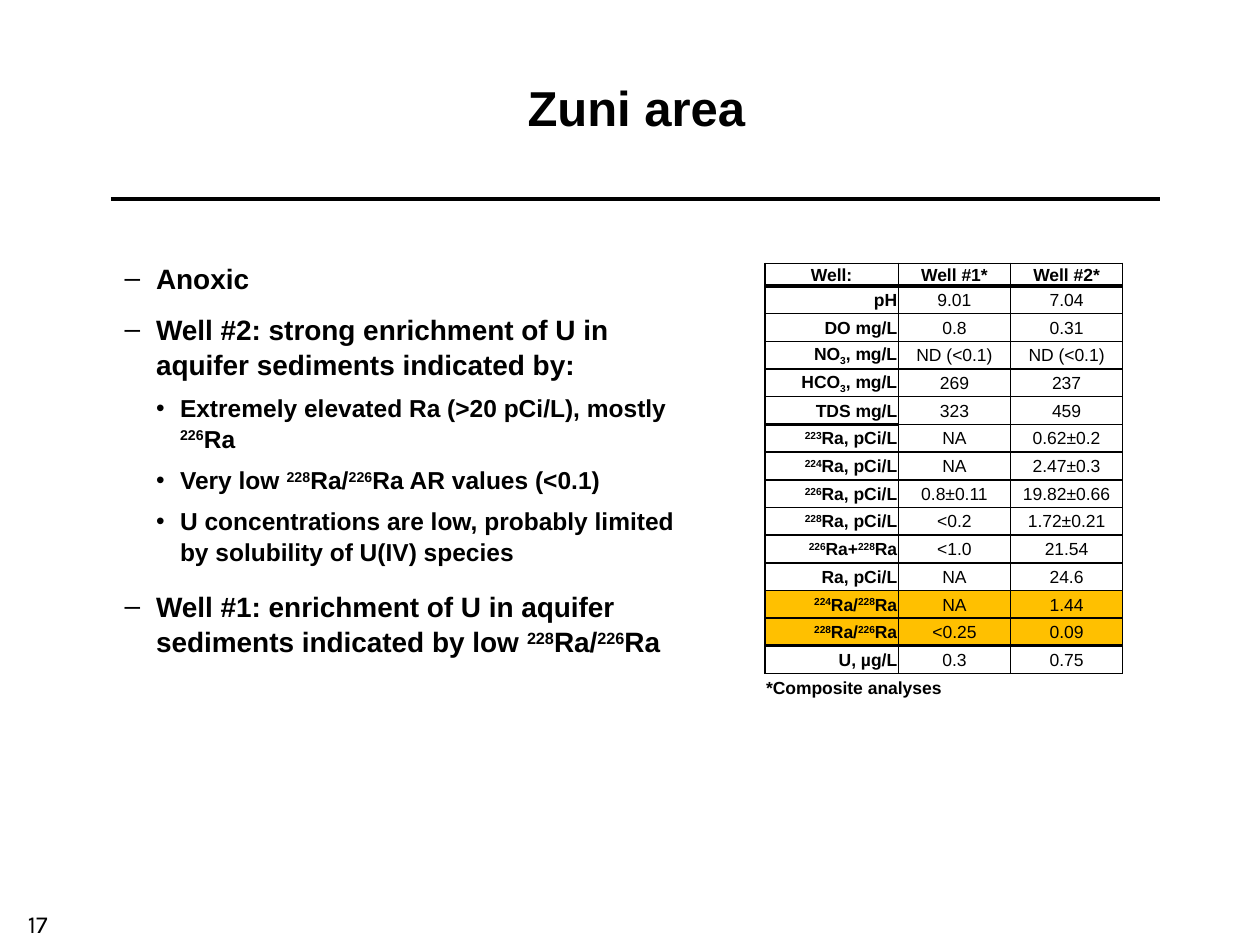
import pptx
import pptx.util
import pptx.dml.color
import pptx.enum.shapes
import pptx.enum.text
from lxml import etree

Inches, Pt = pptx.util.Inches, pptx.util.Pt
ALIGN, ANCHOR = pptx.enum.text.PP_ALIGN, pptx.enum.text.MSO_ANCHOR
NS = "http://schemas.openxmlformats.org/drawingml/2006/main"

# Content: "|" parts runs, "^" raises a run and "_" lowers it
COLORS = {"ink": "000000", "mark": "FFC000"}
TITLE = "Zuni area"
PAGE = "17"
POINTS = [  # level, space before, space after, text
    (0, 0, 3, "Anoxic"),
    (0, 6, 6, "Well #2: strong enrichment of U in aquifer sediments indicated by:"),
    (1, 0, 6, "Extremely elevated Ra (>20 pCi/L), mostly |^226|Ra"),
    (1, 0, 6, "Very low |^228|Ra/|^226|Ra AR values (<0.1)"),
    (1, 0, 6, "U concentrations are low, probably limited by solubility of U(IV) species"),
    (0, 6, 3, "Well #1: enrichment of U in aquifer sediments indicated by low |^228|Ra/|^226|Ra"),
]
LEVELS = [  # bullet, left indent, hanging indent, size
    ("–", 0.25, 0.25, 16),
    ("•", 0.44, 0.19, 14),
]
ROWS = [
    ("Well:", "Well #1*", "Well #2*"),
    ("pH", "9.01", "7.04"),
    ("DO mg/L", "0.8", "0.31"),
    ("NO|_3|, mg/L", "ND (<0.1)", "ND (<0.1)"),
    ("HCO|_3|, mg/L", "269", "237"),
    ("TDS mg/L", "323", "459"),
    ("|^223|Ra, pCi/L", "NA", "0.62±0.2"),
    ("|^224|Ra, pCi/L", "NA", "2.47±0.3"),
    ("|^226|Ra, pCi/L", "0.8±0.11", "19.82±0.66"),
    ("|^228|Ra, pCi/L", "<0.2", "1.72±0.21"),
    ("|^226|Ra+|^228|Ra", "<1.0", "21.54"),
    ("Ra, pCi/L", "NA", "24.6"),
    ("|^224|Ra/|^228|Ra", "NA", "1.44"),
    ("|^228|Ra/|^226|Ra", "<0.25", "0.09"),
    ("U, µg/L", "0.3", "0.75"),
    ("*Composite analyses", "", ""),
]
NOTE = len(ROWS) - 1
MARKED = (12, 13)
THICK = {0: (0, 1, 2), 5: (0,), 13: (0, 1, 2)}  # row: columns with a heavy rule below
COLS = (1.06, 0.89, 0.89)
HEAD, STEP = 0.18, 0.22


def color(name):
    return pptx.dml.color.RGBColor.from_string(COLORS[name])


def write(para, text, size, bold=True, face="Arial", **form):
    for key, val in form.items():
        setattr(para, key, val)
    look = {"size": Pt(size), "bold": bold, "name": face}
    for part in filter(None, text.split("|")):
        run = para.add_run()
        run.text = part.lstrip("^_")
        for key, val in look.items():
            setattr(run.font, key, val)
        run.font.color.rgb = color("ink")
        shift = {"^": "30000", "_": "-25000"}.get(part[0])
        if shift:
            run.font._element.set("baseline", shift)


def add_box(slide, area, anchor):
    frame = slide.shapes.add_textbox(*map(Inches, area)).text_frame
    frame.word_wrap = True
    frame.vertical_anchor = anchor
    return frame


def add_bullet(para, sign, left, hang):
    props = para._p.get_or_add_pPr()
    props.set("marL", str(Inches(left)))
    props.set("indent", str(-Inches(hang)))
    etree.SubElement(props, f"{{{NS}}}buFont", typeface="Arial")
    etree.SubElement(props, f"{{{NS}}}buChar", char=sign)


def add_rules(cell, widths):
    props = cell._tc.get_or_add_tcPr()
    for spot, (side, width) in enumerate(zip("LRTB", widths)):
        line = etree.Element(f"{{{NS}}}ln{side}", w=str(Pt(width)))
        if width:
            fill = etree.SubElement(line, f"{{{NS}}}solidFill")
            etree.SubElement(fill, f"{{{NS}}}srgbClr", val=COLORS["ink"])
        else:
            etree.SubElement(line, f"{{{NS}}}noFill")
        props.insert(spot, line)


def add_grid(slide):
    area = (6.07, 2.09, sum(COLS), HEAD + STEP * NOTE)
    grid = slide.shapes.add_table(len(ROWS), len(COLS), *map(Inches, area)).table
    grid.first_row = grid.horz_banding = False
    for col, width in zip(grid.columns, COLS):
        col.width = Inches(width)
    edge = Inches(0.01)
    form = {"margin_left": edge, "margin_top": edge, "margin_right": edge,
            "margin_bottom": 0, "vertical_anchor": ANCHOR.MIDDLE}
    for r, row in enumerate(ROWS):
        grid.rows[r].height = Inches(STEP if r else HEAD)
        for c, text in enumerate(row):
            cell = grid.cell(r, c)
            for key, val in form.items():
                setattr(cell, key, val)
            if r in MARKED:
                cell.fill.solid()
                cell.fill.fore_color.rgb = color("mark")
            else:
                cell.fill.background()
            above = 2 if c in THICK.get(r - 1, ()) and r < NOTE else 1
            below = 2 if c in THICK.get(r, ()) else 1
            add_rules(cell, (0, 0, 1, 0) if r == NOTE else (1, 1, above, below))
            side = ALIGN.CENTER if r == 0 or c else ALIGN.RIGHT
            if r == NOTE:
                side = ALIGN.LEFT
            write(cell.text_frame.paragraphs[0], text, 10,
                  bold=r == 0 or c == 0, alignment=side)
    grid.cell(NOTE, 0).merge(grid.cell(NOTE, len(COLS) - 1))


def main():
    deck = pptx.Presentation()
    deck.slide_width, deck.slide_height = Inches(10), Inches(7.5)
    slide = deck.slides.add_slide(deck.slide_layouts[6])

    # Rule under the title
    rule = slide.shapes.add_connector(
        pptx.enum.shapes.MSO_CONNECTOR.STRAIGHT,
        *map(Inches, (0.88, 1.58, 9.21, 1.58)))
    rule.line.color.rgb = color("ink")
    rule.line.width = Pt(2)
    etree.SubElement(rule._element.spPr, f"{{{NS}}}effectLst")

    # Title
    frame = add_box(slide, (0.8, 0.18, 8.5, 1.33), ANCHOR.MIDDLE)
    write(frame.paragraphs[0], TITLE, 28, alignment=ALIGN.CENTER)

    # Findings
    frame = add_box(slide, (0.89, 2.01, 4.71, 3.45), ANCHOR.TOP)
    for num, (level, before, after, text) in enumerate(POINTS):
        para = frame.add_paragraph() if num else frame.paragraphs[0]
        sign, left, hang, size = LEVELS[level]
        add_bullet(para, sign, left, hang)
        write(para, text, size, level=1, line_spacing=1.05,
              space_before=Pt(before), space_after=Pt(after))

    # Well analyses
    add_grid(slide)

    # Page number
    frame = add_box(slide, (0, 7, 0.6, 0.5), ANCHOR.BOTTOM)
    write(frame.paragraphs[0], PAGE, 14, bold=False, face="Karla",
          alignment=ALIGN.CENTER)

    deck.save("out.pptx")


if __name__ == "__main__":
    main()
